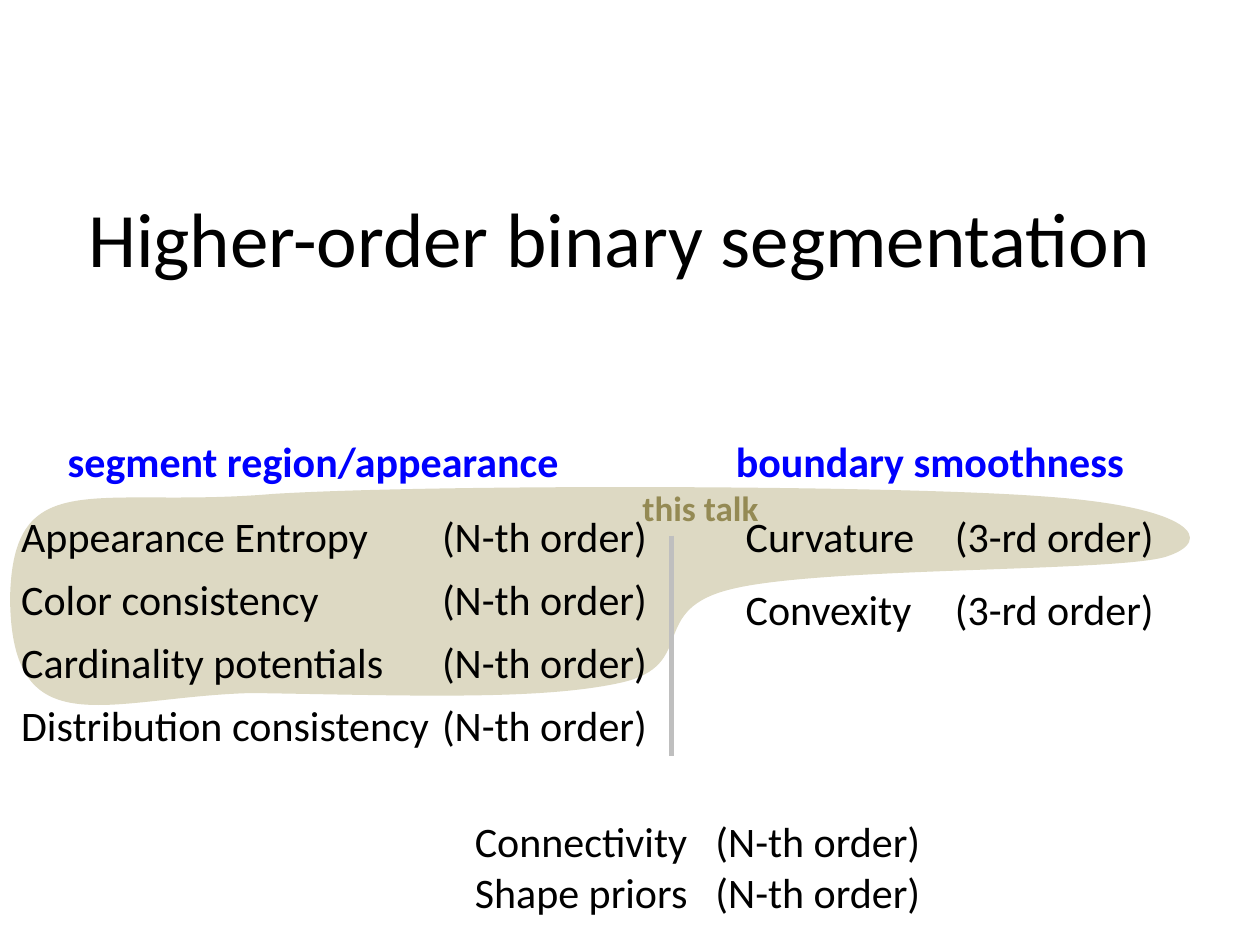
from lxml import etree
from pptx import Presentation
from pptx.dml.color import RGBColor
from pptx.enum.shapes import MSO_CONNECTOR
from pptx.enum.text import MSO_ANCHOR, PP_ALIGN
from pptx.oxml.ns import qn
from pptx.util import Inches, Pt

BLACK = RGBColor(0x00, 0x00, 0x00)
BLUE = RGBColor(0x00, 0x00, 0xFF)
SAND = RGBColor(0xDD, 0xD9, 0xC3)
OLIVE = RGBColor(0x94, 0x8A, 0x54)
GRAY = RGBColor(0xBF, 0xBF, 0xBF)

prs = Presentation()
prs.slide_width = Inches(10)
prs.slide_height = Inches(7.5)
slide = prs.slides.add_slide(prs.slide_layouts[6])


def add_text(text, left, top, width, height=0.5, size=24, color=BLACK, bold=False,
             align=PP_ALIGN.LEFT, anchor=MSO_ANCHOR.TOP, tab=None):
    box = slide.shapes.add_textbox(Inches(left), Inches(top), Inches(width), Inches(height))
    frame = box.text_frame
    frame.word_wrap = True
    frame.vertical_anchor = anchor
    paragraph = frame.paragraphs[0]
    paragraph.alignment = align
    if tab:
        stops = etree.SubElement(paragraph._p.get_or_add_pPr(), qn("a:tabLst"))
        etree.SubElement(stops, qn("a:tab"), pos=str(Inches(tab)), algn="l")
    run = paragraph.add_run()
    run.text = text
    run.font.name = "Calibri"
    run.font.size = Pt(size)
    run.font.bold = bold
    run.font.color.rgb = color


talk_start = (8.28, 3.94)
talk_curves = [
    (7.1, 3.85), (3.5, 3.84), (2.17, 3.92),
    (0.76, 4.04), (0.1, 3.67), (0.08, 4.75),
    (0.09, 5.95), (0.86, 5.53), (2, 5.5),
    (3.25, 5.52), (4.28, 5.56), (4.92, 5.42),
    (5.56, 5.28), (5.11, 4.83), (5.83, 4.67),
    (6.56, 4.5), (8.84, 4.54), (9.25, 4.42),
    (9.66, 4.29), (9.46, 4.02), talk_start,
]
builder = slide.shapes.build_freeform(Inches(talk_start[0]), Inches(talk_start[1]))
builder.add_line_segments([(Inches(x), Inches(y)) for x, y in talk_curves], close=True)
talk_region = builder.convert_to_shape()
talk_region.shadow.inherit = False
talk_region.fill.solid()
talk_region.fill.fore_color.rgb = SAND
talk_region.line.fill.background()
segments = list(talk_region._element.iter(qn("a:lnTo")))
for first in range(0, len(segments), 3):
    curve = etree.Element(qn("a:cubicBezTo"))
    segments[first].addprevious(curve)
    for segment in segments[first:first + 3]:
        curve.append(segment[0])
        segment.getparent().remove(segment)

add_text("this talk", 5, 3.81, 1.15, 0.44, size=20, color=OLIVE, bold=True)

divider = slide.shapes.add_connector(
    MSO_CONNECTOR.STRAIGHT, Inches(5.33), Inches(4.25), Inches(5.33), Inches(6))
divider.line.color.rgb = GRAY
divider.line.width = Pt(3.25)
etree.SubElement(divider._element.spPr, qn("a:effectLst"))

add_text("Higher-order binary segmentation", 0.42, 1.25, 9, 1.25, size=44,
         align=PP_ALIGN.CENTER, anchor=MSO_ANCHOR.MIDDLE)

for heading, left, width in [("segment region/appearance", 0.34, 4.29),
                             ("boundary smoothness", 5.72, 3.32)]:
    add_text(heading, left, 3.41, width, color=BLUE, bold=True, align=PP_ALIGN.CENTER)

term_groups = [
    (0.07, 4, 0.5, 5.23, 3.34, [
        ("Appearance Entropy", "N-th"),
        ("Color consistency", "N-th"),
        ("Cardinality potentials", "N-th"),
        ("Distribution consistency", "N-th"),
    ]),
    (5.82, 4, 0.58, 3.5, 1.66, [("Curvature", "3-rd"), ("Convexity", "3-rd")]),
    (3.67, 6.42, 0.41, 4.25, 1.91, [("Connectivity", "N-th"), ("Shape priors", "N-th")]),
]
for left, top, pitch, width, tab, terms in term_groups:
    for row, (term, order) in enumerate(terms):
        add_text(f"{term}\t({order} order)", left, top + row * pitch, width, tab=tab)

prs.save("out.pptx")
